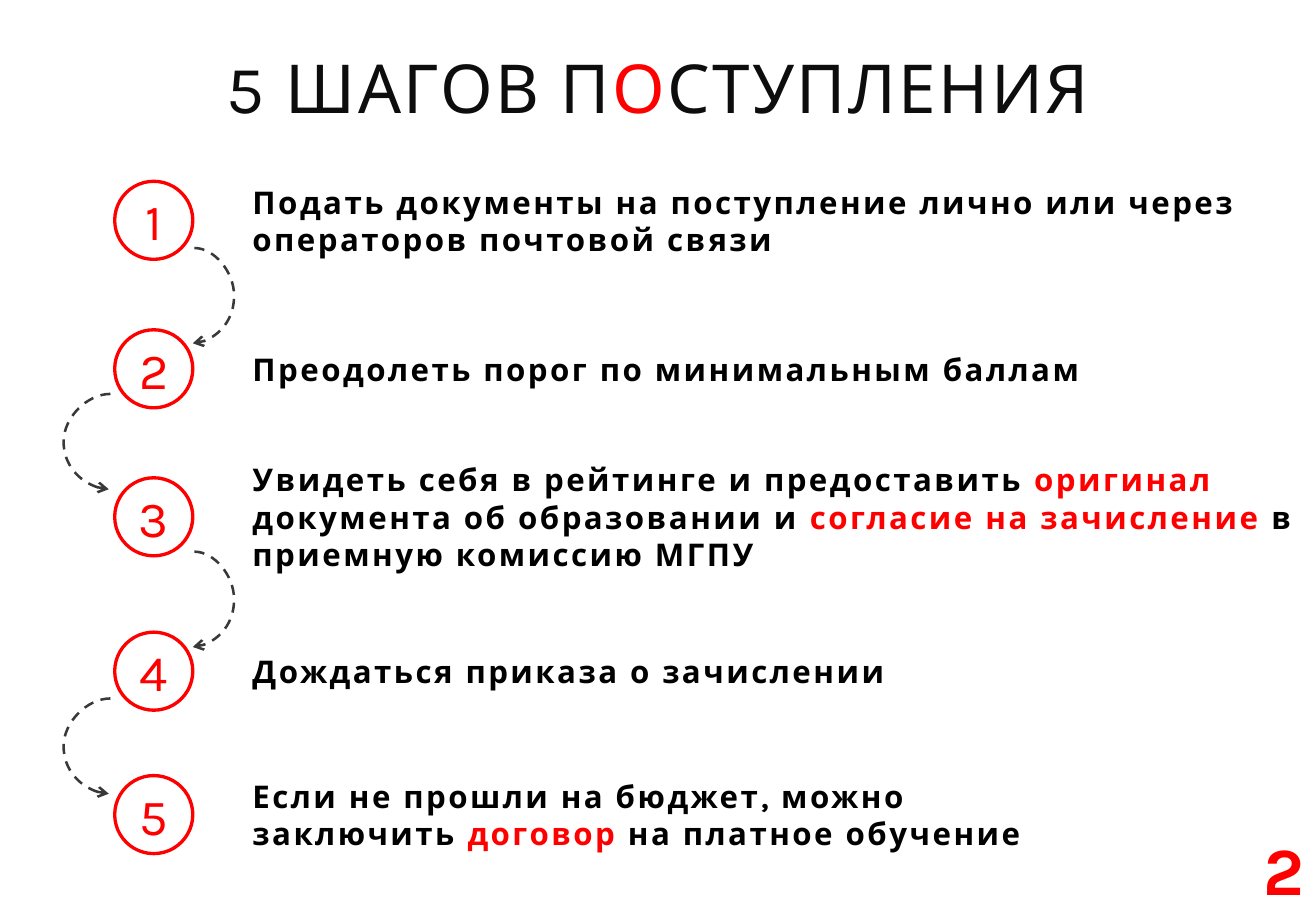
from dataclasses import dataclass

from lxml import etree
from pptx import Presentation
from pptx.dml.color import RGBColor
from pptx.enum.dml import MSO_LINE
from pptx.enum.shapes import MSO_CONNECTOR, MSO_SHAPE
from pptx.enum.text import MSO_ANCHOR, PP_ALIGN
from pptx.oxml.ns import qn
from pptx.util import Pt

LEFT, CENTER, RIGHT = PP_ALIGN.LEFT, PP_ALIGN.CENTER, PP_ALIGN.RIGHT
MIDDLE = MSO_ANCHOR.MIDDLE
DONUT, CURVE, DASH = MSO_SHAPE.DONUT, MSO_CONNECTOR.CURVE, MSO_LINE.DASH


@dataclass(frozen=True)
class Theme:
    font: str = "Karla"
    accent: RGBColor = RGBColor(0xFF, 0x00, 0x00)
    heading: RGBColor = RGBColor(0x0D, 0x0D, 0x0D)
    body: RGBColor = RGBColor(0x00, 0x00, 0x00)
    arrow: RGBColor = RGBColor(0x3B, 0x38, 0x38)
    title_size: float = 40
    number_size: float = 30
    step_size: float = 18.5
    spacing: str = "150"


theme = Theme()


def add_text(slide, box, pieces, size, color, align=LEFT, bold=False,
             spaced=True, wrap=True):
    """Add a text box; every second piece takes the accent colour."""
    text_box = slide.shapes.add_textbox(*(Pt(value) for value in box))
    frame = text_box.text_frame
    frame.word_wrap = wrap
    frame.vertical_anchor = MIDDLE
    paragraph = frame.paragraphs[0]
    paragraph.alignment = align
    for index, piece in enumerate(pieces):
        run = paragraph.add_run()
        run.text = piece
        run.font.name = theme.font
        run.font.size = Pt(size)
        run.font.bold = bold
        run.font.color.rgb = theme.accent if index % 2 else color
        if spaced:
            run.font._element.set("spc", theme.spacing)
    return paragraph


def add_arrow(slide, right, top, bend):
    """Add a dashed curve going down, bulging sideways by bend."""
    arrow = slide.shapes.add_connector(
        CURVE, Pt(right), Pt(top), Pt(right - 1), Pt(top + 56.5))
    arrow.line.color.rgb = theme.arrow
    arrow.line.width = Pt(1.5)
    arrow.line.dash_style = DASH
    properties = arrow._element.spPr
    etree.SubElement(properties.find(qn("a:ln")), qn("a:tailEnd"), type="arrow")
    etree.SubElement(properties, qn("a:effectLst"))
    guides = properties.find(qn("a:prstGeom")).get_or_add_avLst()
    # The curve is 1 pt wide, so its bend is a multiple of that width.
    etree.SubElement(guides, qn("a:gd"), name="adj1",
                     fmla=f"val {round(-bend * 100000)}")


presentation = Presentation()
presentation.slide_width = Pt(779.76)
presentation.slide_height = Pt(540)
slide = presentation.slides.add_slide(presentation.slide_layouts[6])

title = add_text(slide, (0, 21, 779.76, 67), ["5 ШАГОВ П", "О", "СТУПЛЕНИЯ"],
                 theme.title_size, theme.heading, CENTER)
title.line_spacing = 0.9
add_text(slide, (604, 500.5, 175.75, 29), ["2"], theme.title_size,
         theme.accent, RIGHT, bold=True, spaced=False)

# Circle top, text width, text pieces
steps = [
    (106.5, 635, ["Подать документы на поступление лично или через "
                  "операторов почтовой связи"]),
    (194.5, 635, ["Преодолеть порог по минимальным баллам"]),
    (282.25, 638.5, ["Увидеть себя в рейтинге и предоставить ", "оригинал ",
                     "документа об образовании и ", "согласие на зачисление ",
                     "в приемную комиссию МГПУ"]),
    (373.75, 450.75, ["Дождаться приказа о зачислении"]),
    (458.75, 491, ["Если не прошли на бюджет, можно заключить ", "договор ",
                   "на платное обучение"]),
]
circle_left, circle_size = 67, 48.25

for number, (top, width, pieces) in enumerate(steps, start=1):
    circle = slide.shapes.add_shape(DONUT, Pt(circle_left), Pt(top),
                                    Pt(circle_size), Pt(circle_size))
    circle.adjustments[0] = 0.041
    circle.shadow.inherit = False
    circle.fill.solid()
    circle.fill.fore_color.rgb = theme.accent
    circle.line.fill.background()
    add_text(slide, (circle_left, top + 2.25, circle_size, 44), [str(number)],
             theme.number_size, theme.accent, CENTER, wrap=False)
    add_text(slide, (142.5, top, width, circle_size), pieces,
             theme.step_size, theme.body, bold=True)

for index, top in enumerate([147, 233.5, 327, 414]):
    if index % 2:
        add_arrow(slide, 65.5, top, -28)
    else:
        add_arrow(slide, 115.25, top, 23.7)

presentation.save("out.pptx")
